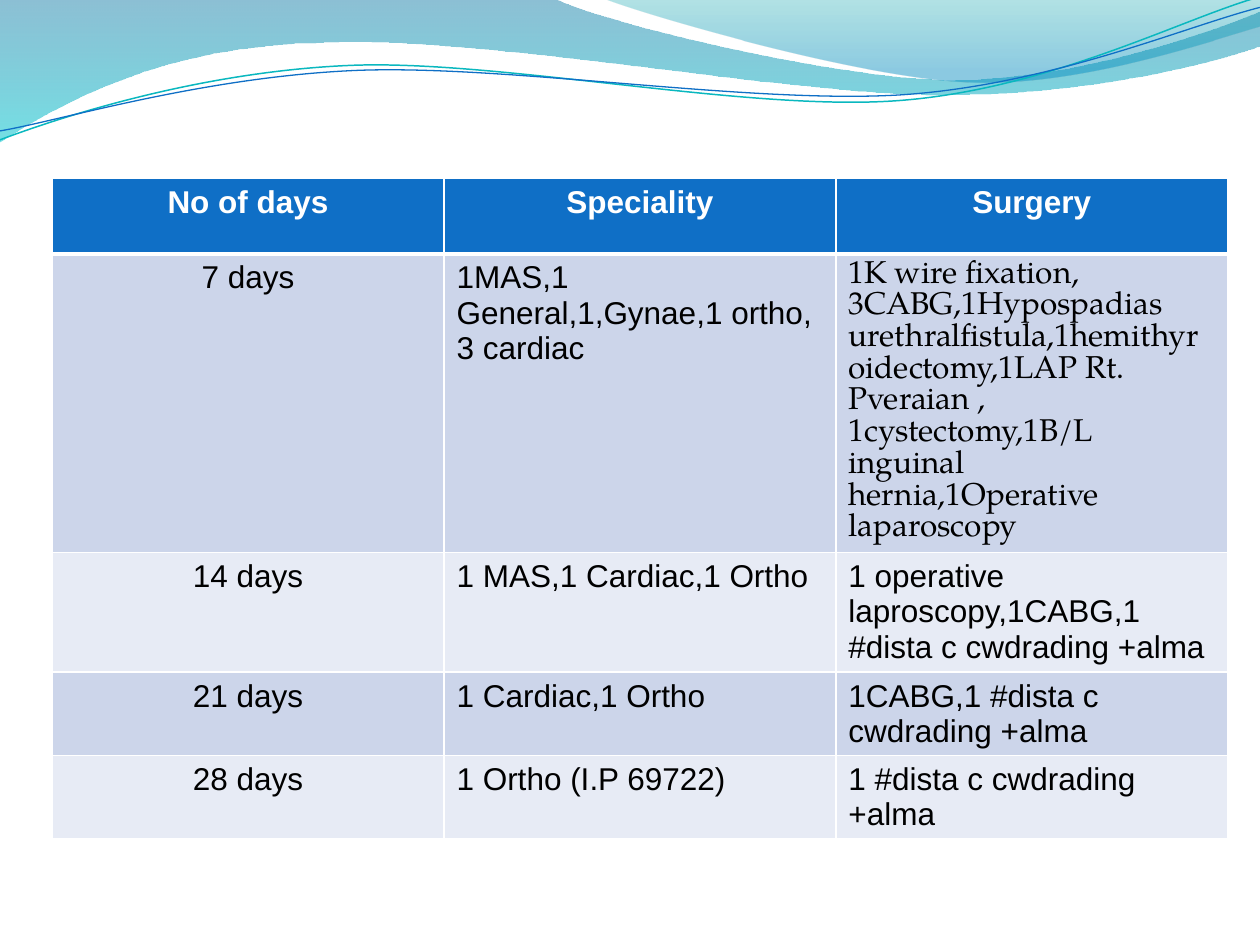
from dataclasses import dataclass
from typing import Optional

from lxml.etree import SubElement
from pptx import Presentation
from pptx.dml.color import RGBColor
from pptx.enum.text import PP_ALIGN as Align
from pptx.oxml.ns import qn
from pptx.util import Cm, Pt

COLORS = {
    "header": "0F6FC6",
    "odd_row": "CCD5EA",
    "even_row": "E7EBF5",
    "white": "FFFFFF",
    "black": "000000",
    "teal_line": "0AB8BF",
    "ocean": "0074A1",
    "turquoise": "00C6CF",
    "lagoon": "00A1A9",
    "sky": "008BBF",
}
Point = tuple[float, float]


@dataclass
class Stop:
    position: float
    color: str
    opacity: int


@dataclass
class Wave:
    start: Point
    segments: list[tuple[Point, ...]]
    stops: tuple[Stop, ...] = ()
    line_color: Optional[str] = None
    line_width: float = 0


@dataclass
class Row:
    height: float
    texts: tuple[str, str, str]


WAVES = [
    Wave(
        (0, -0.03),
        [
            ((11.18, -0.03),),
            ((12.09, 0.43), (16.87, 1.6), (19.25, 1.6)),
            ((21.67, 1.6), (24.33, 0.66), (25.4, 0.23)),
            ((25.43, 0.91),),
            ((24.97, 1.12), (22.1, 1.93), (18.95, 1.91)),
            ((15.8, 1.91), (9.7, 0.71), (6.53, 0.86)),
            ((3.28, 0.89), (1.17, 2.11), (-0.03, 2.87)),
        ],
        stops=(Stop(0, "ocean", 45), Stop(1, "turquoise", 55)),
    ),
    Wave(
        (12.17, -0.03),
        [
            ((12.93, 0.28), (17.32, 1.57), (19.53, 1.65)),
            ((21.74, 1.75), (24.41, 0.81), (25.4, 0.53)),
            ((25.4, 0),),
        ],
        stops=(Stop(0, "lagoon", 30), Stop(0.8, "sky", 45)),
    ),
    Wave(
        (0, 2.82),
        [
            ((1.22, 2.36), (4.01, 1.45), (7.04, 1.32)),
            ((10.03, 1.19), (15.06, 2.26), (18.11, 2.03)),
            ((21.16, 1.8), (23.83, 0.38), (25.35, -0.05)),
        ],
        line_color="teal_line",
        line_width=0.85,
    ),
    Wave(
        (0, 2.64),
        [
            ((1.19, 2.44), (4.09, 1.55), (7.19, 1.42)),
            ((10.24, 1.3), (15.16, 2.11), (18.21, 1.91)),
            ((21.23, 1.7), (23.9, 0.53), (25.4, 0.15)),
        ],
        line_color="header",
        line_width=0.75,
    ),
]

ROWS = [
    Row(1.52, ("No of days", "Speciality", "Surgery")),
    Row(6.02, (
        "7 days",
        "1MAS,1 General,1,Gynae,1 ortho, 3 cardiac",
        "1K wire fixation,\n3CABG,1Hypospadias urethralfistula,1hemithyroidectomy,"
        "1LAP Rt. Pveraian , 1cystectomy,1B/L inguinal hernia,1Operative laparoscopy",
    )),
    Row(2.41, (
        "14 days",
        "1 MAS,1 Cardiac,1 Ortho",
        "1 operative laproscopy,1CABG,1 #dista c cwdrading +alma",
    )),
    Row(1.68, ("21 days", "1 Cardiac,1 Ortho", "1CABG,1 #dista c cwdrading +alma")),
    Row(1.68, ("28 days", "1 Ortho (I.P 69722)", "1 #dista c cwdrading +alma")),
]


def rgb(name: str) -> RGBColor:
    return RGBColor.from_string(COLORS[name])


def bend(ribbon, segments: list[tuple[Point, ...]]) -> None:
    steps = iter(list(ribbon._element.iter(qn("a:lnTo"))))
    for segment in segments:
        first, *others = [next(steps) for _ in segment]
        if others:
            curve = first.makeelement(qn("a:cubicBezTo"))
            first.addprevious(curve)
            for step in (first, *others):
                curve.append(step[0])
                step.getparent().remove(step)


def draw_wave(slide, wave: Wave) -> None:
    points = [wave.start] + [point for segment in wave.segments for point in segment]
    start, *rest = [(Cm(x), Cm(y)) for x, y in points]
    builder = slide.shapes.build_freeform(*start)
    builder.add_line_segments(rest, close=bool(wave.stops))
    ribbon = builder.convert_to_shape()
    bend(ribbon, wave.segments)
    ribbon.shadow.inherit = False
    if wave.stops:
        ribbon.line.fill.background()
        ribbon.fill.gradient()
        ribbon.fill.gradient_angle = 270
        for target, stop in zip(ribbon.fill.gradient_stops, wave.stops):
            target.position = stop.position
            target.color.rgb = rgb(stop.color)
        colors = ribbon._element.spPr.iter(qn("a:srgbClr"))
        for color, stop in zip(colors, wave.stops):
            SubElement(color, qn("a:alpha"), val=str(stop.opacity * 1000))
    else:
        ribbon.fill.background()
        ribbon.line.color.rgb = rgb(wave.line_color)
        ribbon.line.width = Pt(wave.line_width)


def draw_borders(cell, row_index: int) -> None:
    heavy_side = {0: "lnB", 1: "lnT"}.get(row_index)
    properties = cell._tc.get_or_add_tcPr()
    for side in ("lnL", "lnR", "lnT", "lnB"):
        width = Pt(3 if side == heavy_side else 1)
        border = SubElement(properties, qn(f"a:{side}"), w=str(width))
        paint = SubElement(border, qn("a:solidFill"))
        SubElement(paint, qn("a:srgbClr"), val=COLORS["white"])


def fill_cell(cell, text: str, row_index: int, column_index: int) -> None:
    is_header = row_index == 0
    is_serif = (row_index, column_index) == (1, 2)
    draw_borders(cell, row_index)
    cell.fill.solid()
    band = "header" if is_header else "odd_row" if row_index % 2 else "even_row"
    cell.fill.fore_color.rgb = rgb(band)
    cell.text = text
    for paragraph in cell.text_frame.paragraphs:
        centred = is_header or column_index == 0
        paragraph.alignment = Align.CENTER if centred else Align.LEFT
        if is_serif:
            paragraph.line_spacing = Pt(18.1)
        paragraph.font.name = "TeX Gyre Pagella" if is_serif else "Arial"
        paragraph.font.size = Pt(18)
        paragraph.font.bold = is_header
        paragraph.font.color.rgb = rgb("white" if is_header else "black")


def draw_table(slide, rows: list[Row]) -> None:
    height = Cm(sum(row.height for row in rows))
    schedule = slide.shapes.add_table(
        len(rows), 3, Cm(1.05), Cm(3.6), Cm(23.7), height
    ).table
    for row_index, row in enumerate(rows):
        schedule.rows[row_index].height = Cm(row.height)
        for column_index, text in enumerate(row.texts):
            fill_cell(schedule.cell(row_index, column_index), text, row_index, column_index)


def main() -> None:
    deck = Presentation()
    deck.slide_width, deck.slide_height = Cm(25.4), Cm(19.05)
    slide = deck.slides.add_slide(deck.slide_layouts[6])
    for wave in WAVES:
        draw_wave(slide, wave)
    draw_table(slide, ROWS)
    deck.save("out.pptx")


if __name__ == "__main__":
    main()
